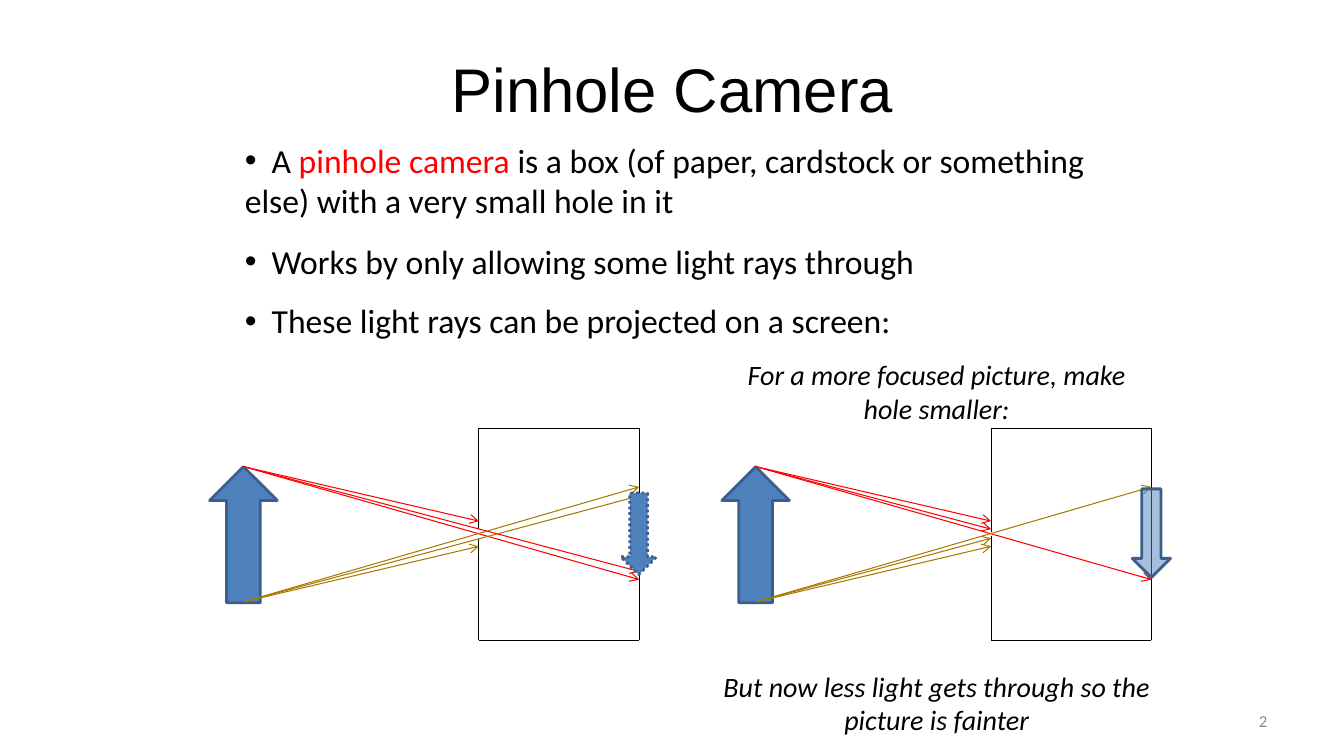
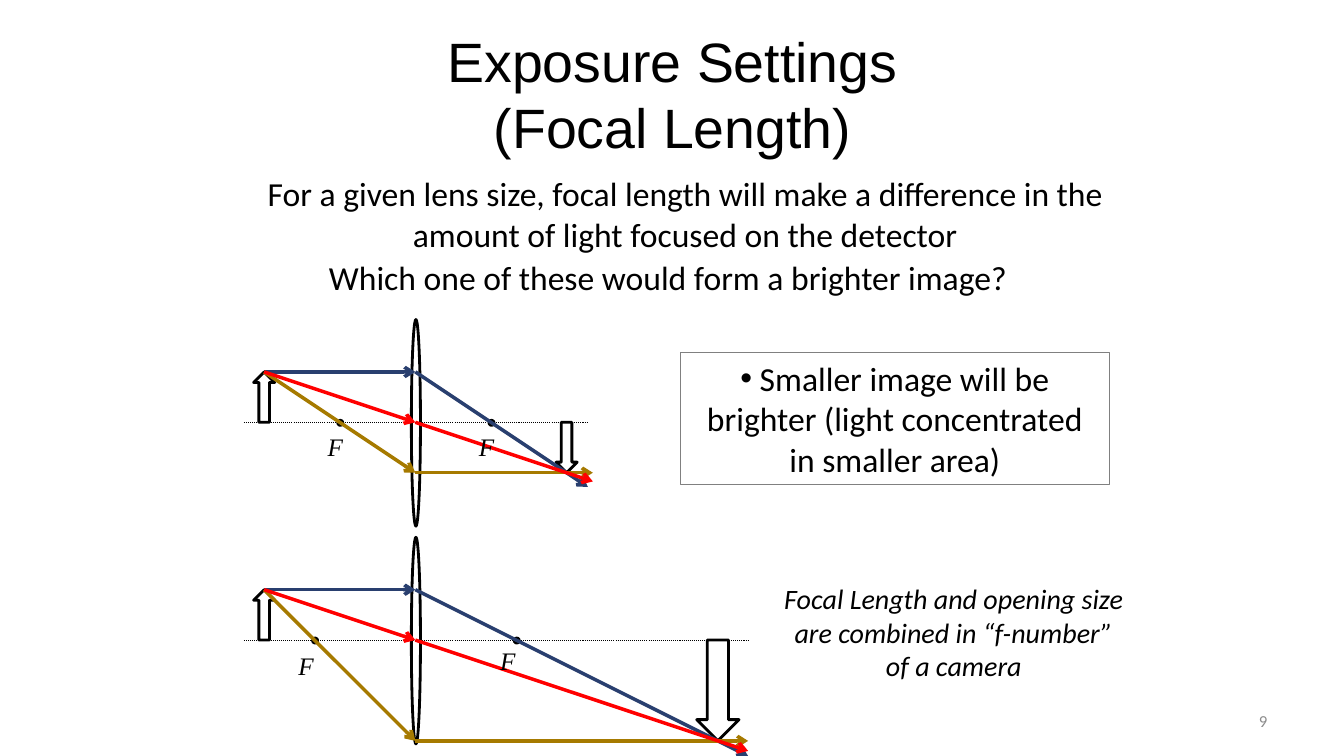
"""Builds two optics slides: the pinhole camera and the effect of focal length."""
from dataclasses import dataclass

from pptx import Presentation
from pptx import util as u
from pptx.dml.color import RGBColor
from pptx.enum import dml, shapes, text
from pptx.oxml.ns import qn
from lxml import etree

ALIGN, ANCHOR, SHAPE = text.PP_ALIGN, text.MSO_ANCHOR, shapes.MSO_SHAPE


@dataclass(frozen=True)
class Theme:
    black: str = "000000"
    red: str = "FF0000"
    gold: str = "A67A00"
    navy: str = "293F6F"
    blue: str = "4F81BD"
    edge: str = "3A5F8C"
    gray: str = "808080"
    pale: str = "8C8C8C"
    heading: str = "Arial"
    body: str = "Calibri"
    symbol: str = "Times New Roman"
    title_size: float = 44
    long_title_size: float = 39.6
    body_size: float = 24
    note_size: float = 20
    label_size: float = 18
    number_size: float = 12
    thin: float = 0.75
    outline: float = 2
    ray: float = 2.5


T = Theme()


def assign(obj, values):
    for name, value in values.items():
        setattr(obj, name, value)


class Deck:
    def __init__(self):
        self.prs = Presentation()
        assign(self.prs, dict(slide_width=u.Inches(13.33), slide_height=u.Inches(7.5)))
        self.s = None

    def add_slide(self, title, at, size, number):
        self.s = self.prs.slides.add_slide(self.prs.slide_layouts[5])
        sp = self.s.shapes.title
        assign(sp, dict(zip(("left", "top", "width", "height"), map(u.Inches, at))))
        self.set_text(sp.text_frame, [(title, T.black)], size, T.heading,
                      anchor=ANCHOR.MIDDLE)
        self.text((9.56, 6.95, 3.11, 0.4), str(number), T.number_size, color=T.pale,
                  align=ALIGN.RIGHT, anchor=ANCHOR.MIDDLE)

    def set_text(self, tf, runs, size, font, italic=False, align=ALIGN.CENTER,
                 anchor=ANCHOR.TOP, bullet=False):
        assign(tf, dict(word_wrap=True, auto_size=text.MSO_AUTO_SIZE.NONE,
                        vertical_anchor=anchor))
        p = tf.paragraphs[0]
        p.alignment = align
        if bullet:
            pPr = p._p.get_or_add_pPr()
            pPr.set("marL", "0")
            pPr.set("indent", "0")
            etree.SubElement(pPr, qn("a:buFont")).set("typeface", T.heading)
            etree.SubElement(pPr, qn("a:buChar")).set("char", "•")
        for words, color in runs:
            for i, line in enumerate(words.split("\n")):
                if i:
                    p.add_line_break()
                r = p.add_run()
                r.text = line
                assign(r.font, dict(size=u.Pt(size), name=font, italic=italic))
                r.font.color.rgb = RGBColor.from_string(color)

    def text(self, at, runs, size=T.body_size, font=T.body, color=T.black, **style):
        sp = self.s.shapes.add_textbox(*map(u.Inches, at))
        if isinstance(runs, str):
            runs = [(runs, color)]
        self.set_text(sp.text_frame, runs, size, font, **style)
        return sp

    def note(self, at, words):
        self.text(at, words, T.note_size, italic=True)

    def label(self, x, y):
        sp = self.text((x, y, 0.16, 0.4), "F", T.label_size, T.symbol,
                       italic=True, align=ALIGN.LEFT)
        assign(sp.text_frame, dict(margin_left=0, margin_right=0, word_wrap=False))

    def stroke(self, line, color, width, dotted=False):
        line.color.rgb = RGBColor.from_string(color)
        line.width = u.Pt(width)
        if dotted:
            line.dash_style = dml.MSO_LINE.ROUND_DOT

    def shape(self, kind, at, fill=None, edge=T.black, width=T.outline,
              dotted=False, alpha=None):
        sp = self.s.shapes.add_shape(kind, *map(u.Inches, at))
        sp.shadow.inherit = False
        if fill:
            sp.fill.solid()
            sp.fill.fore_color.rgb = RGBColor.from_string(fill)
        else:
            sp.fill.background()
        if alpha:
            color = sp._element.spPr.find(qn("a:solidFill")).find(qn("a:srgbClr"))
            etree.SubElement(color, qn("a:alpha")).set("val", str(alpha * 1000))
        self.stroke(sp.line, edge, width, dotted)
        return sp

    def line(self, start, end, color=T.black, width=T.thin, dotted=False, arrow=False):
        c = self.s.shapes.add_connector(shapes.MSO_CONNECTOR.STRAIGHT,
                                        *map(u.Inches, (*start, *end)))
        self.stroke(c.line, color, width, dotted)
        if arrow:
            etree.SubElement(c.line._get_or_add_ln(), qn("a:tailEnd")).set("type", "arrow")
        etree.SubElement(c._element.spPr, qn("a:effectLst"))

    def polyline(self, points, **style):
        for start, end in zip(points, points[1:]):
            self.line(start, end, **style)

    def pinhole(self, x, gap, red_ends, gold_ends):
        front, screen, top, bottom, hole = x + 2.33, x + 3.92, 4.25, 6.35, 5.3
        self.polyline([(front, hole - gap), (front, top), (screen, top),
                       (screen, bottom), (front, bottom), (front, hole + gap)])
        self.shape(SHAPE.UP_ARROW, (x - 0.34, 4.63, 0.67, 1.35), T.blue, T.edge)
        for y, color, ends in ((4.63, T.red, red_ends), (5.97, T.gold, gold_ends)):
            for passes, end in ends:
                self.line((x, y), (screen if passes else front, end), color, arrow=True)

    def lens(self, axis, focus, axis_end, ray_end, labels):
        x, distance, height = 4.12, 1.5, 0.5
        tip = (x - distance, axis - height)
        image_distance = 1 / (1 / focus - 1 / distance)
        image_height = height * image_distance / distance
        low = axis + image_height
        self.line((2.42, axis), (axis_end, axis), dotted=True)
        self.shape(SHAPE.OVAL, (x - 0.04, axis - 1.02, 0.09, 2.05))
        for kind, center, top, size in (
                (SHAPE.UP_ARROW, tip[0], tip[1], height),
                (SHAPE.DOWN_ARROW, x + image_distance, axis, image_height)):
            width = 0.42 * size
            self.shape(kind, (center - width / 2, top, width, size))
        for center in (x - focus, x + focus):
            self.shape(SHAPE.OVAL, (center - 0.02, axis - 0.02, 0.05, 0.05), T.black)
        for color, y, end, slope in (
                (T.navy, tip[1], axis_end, height / focus),
                (T.gold, low, ray_end, 0),
                (T.red, axis, ray_end, height / distance)):
            self.polyline([tip, (x, y), (end, y + slope * (end - x))],
                          color=color, width=T.ray, arrow=True)
        for place in labels:
            self.label(*place)


def pinhole_slide(d):
    d.add_slide("Pinhole Camera", (2.17, 0.25, 9, 1.25), T.title_size, 2)
    points = (
        (1.34, 0.91, [("  A ", T.black), ("pinhole camera ", T.red),
                      ("is a box (of paper, cardstock or something else) "
                       "with a very small hole in it", T.black)]),
        (2.34, 0.5, "  Works by only allowing some light rays through"),
        (2.93, 0.5, "  These light rays can be projected on a screen:"),
    )
    for y, h, words in points:
        d.text((2.33, y, 9, h), words, align=ALIGN.LEFT, bullet=True)
    d.pinhole(2.42, 0.05, [(True, 5.67), (True, 5.75), (False, 5.17)],
              [(True, 4.92), (True, 4.83), (False, 5.42)])
    d.pinhole(7.5, 0.02, [(True, 5.75), (False, 5.25), (False, 5.17)],
              [(True, 4.83), (False, 5.34), (False, 5.42)])
    d.shape(SHAPE.DOWN_ARROW, (6.16, 4.89, 0.35, 0.81), T.blue, T.edge, dotted=True)
    d.shape(SHAPE.DOWN_ARROW, (11.23, 4.85, 0.38, 0.88), T.blue, T.edge, alpha=50)
    d.note((7.25, 3.5, 4.08, 0.77), "For a more focused picture, make hole smaller:")
    d.note((7, 6.59, 4.58, 0.77), "But now less light gets through so the picture is fainter")


def focal_length_slide(d):
    d.add_slide("Exposure Settings\n(Focal Length)", (0.67, 0.3, 12, 1.25),
                T.long_title_size, 9)
    d.text((2.42, 1.67, 8.75, 0.91), "For a given lens size, focal length will make a "
           "difference in the amount of light focused on the detector")
    d.text((2.25, 2.5, 8.75, 0.51), "Which one of these would form a brighter image?")
    d.lens(4.19, 0.75, 5.83, 5.88, [(3.25, 4.23), (4.75, 4.23)])
    d.lens(6.35, 1, 7.42, 7.42, [(2.96, 6.4), (4.96, 6.35)])
    sp = d.shape(SHAPE.RECTANGLE, (6.75, 3.5, 4.25, 1.31), edge=T.gray, width=T.thin)
    d.set_text(sp.text_frame, [(" Smaller image will be brighter (light concentrated "
                                "in smaller area)", T.black)],
               T.body_size, T.body, bullet=True)
    d.note((7.67, 5.72, 3.58, 1.11),
           "Focal Length and opening size are combined in “f-number” of a camera")


def main():
    d = Deck()
    pinhole_slide(d)
    focal_length_slide(d)
    d.prs.save("out.pptx")


if __name__ == "__main__":
    main()
